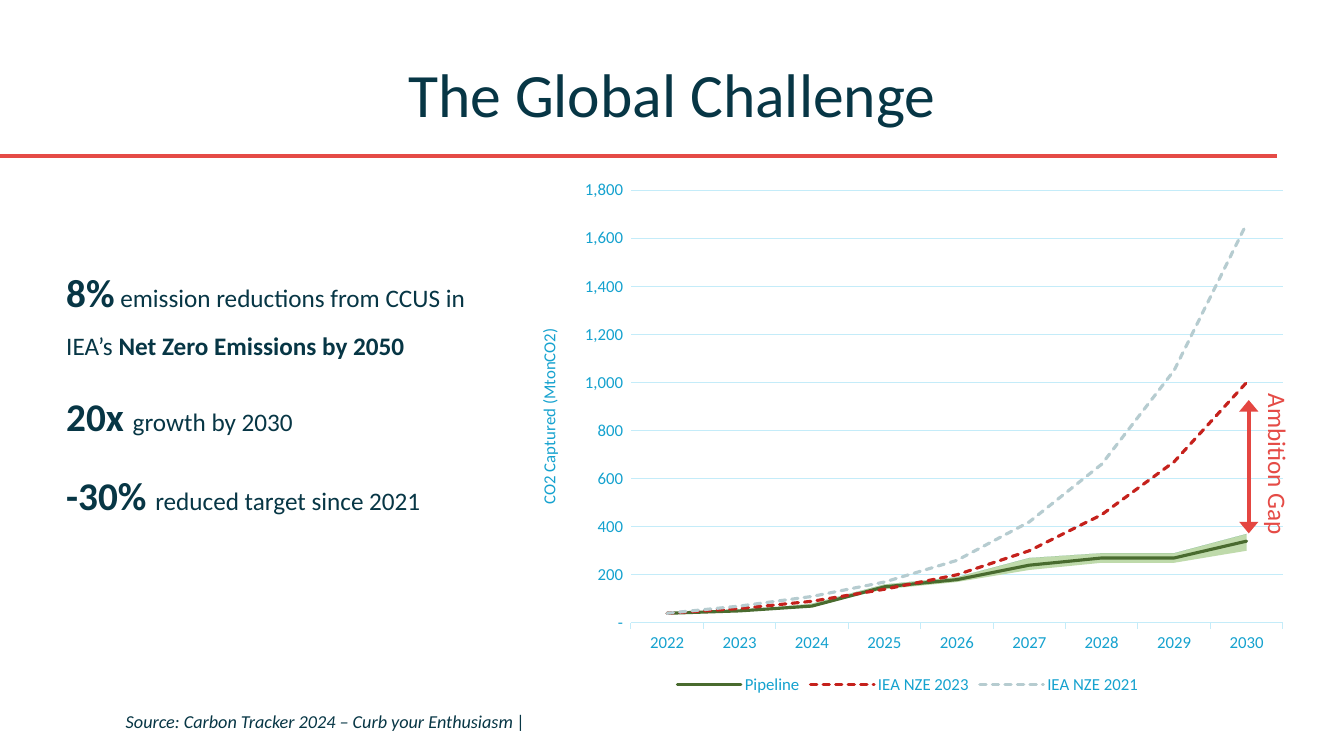
from lxml.etree import SubElement
from pptx import Presentation
from pptx.chart.data import CategoryChartData
from pptx.dml.color import RGBColor
from pptx.enum.chart import XL_CHART_TYPE, XL_LEGEND_POSITION, XL_MARKER_STYLE, XL_TICK_MARK
from pptx.enum.dml import MSO_LINE
from pptx.enum.shapes import MSO_CONNECTOR
from pptx.enum.text import MSO_ANCHOR, PP_ALIGN
from pptx.oxml import parse_xml
from pptx.oxml.ns import nsdecls, qn
from pptx.util import Cm, Pt

FONT = "Calibri"
INK, RED, ARROW_RED = "073645", "E54B46", "E44641"
AXIS_BLUE, GRID_BLUE = "15A2CF", "C4ECF9"
CHART_BOX = (13.03, 4.27, 19.69, 13.34)

YEARS = [str(year) for year in range(2022, 2031)]
# name, colour (None for the invisible base of the band), values
BAND = [
    ("Series 1", None, (40, 50, 70, 140, 170, 220, 250, 250, 300)),
    ("Series 2", "BFDAAB", (0, 0, 10, 20, 20, 50, 40, 40, 70)),
    ("Series 3", "419478", (None,) * len(YEARS)),
]
# name, colour, dash, values
LINES = [
    ("Pipeline", "496B2F", MSO_LINE.SOLID, (40, 50, 70, 150, 180, 240, 270, 270, 340)),
    ("IEA NZE 2023", "C5211C", MSO_LINE.SQUARE_DOT, (40, 60, 90, 140, 200, 300, 450, 670, 1000)),
    ("IEA NZE 2021", "B6CCD0", MSO_LINE.SQUARE_DOT, (40, 70, 110, 170, 260, 420, 660, 1050, 1660)),
]
# each paragraph is a list of (text, size, bold)
FACTS = [
    [("8%", 28, True), (" emission reductions from CCUS in IEA’s ", 18, False),
     ("Net Zero Emissions by 2050", 18, True)],
    [("20x ", 28, True), ("growth by 2030", 18, False)],
    [("-30% ", 28, True), ("reduced target since 2021", 18, False)],
]


def rgb(value):
    return RGBColor.from_string(value)


def set_font(font, size, color, bold=False, italic=False):
    font.name, font.size, font.bold, font.italic = FONT, Pt(size), bold, italic
    font.color.rgb = rgb(color)


def set_line(line, color, width):
    line.color.rgb = rgb(color)
    line.width = Pt(width)


def set_layout(holder, index, **lengths):
    """Place a chart part by lengths in cm; index is where c:layout belongs."""
    layout = holder.find(qn("c:layout"))
    if layout is None:
        layout = parse_xml(f"<c:layout {nsdecls('c')}/>")
        holder.insert(index, layout)
    manual = SubElement(layout, qn("c:manualLayout"))
    if "w" in lengths:
        SubElement(manual, qn("c:layoutTarget")).set("val", "inner")
    for side in "xy":
        SubElement(manual, qn(f"c:{side}Mode")).set("val", "edge")
    width, height = CHART_BOX[2:]
    for side, length in lengths.items():
        fraction = length / (width if side in "xw" else height)
        SubElement(manual, qn(f"c:{side}")).set("val", str(fraction))


def move_to_line_plot(chart, first):
    """Draw the series from index first onwards as lines on the same axes."""
    area = chart.element.find(".//" + qn("c:areaChart"))
    lines = parse_xml(f'<c:lineChart {nsdecls("c")}><c:grouping val="standard"/>'
                      '<c:varyColors val="0"/></c:lineChart>')
    for ser in area.findall(qn("c:ser"))[first:]:
        lines.append(ser)
    SubElement(lines, qn("c:marker")).set("val", "1")
    for axis in area.findall(qn("c:axId")):
        SubElement(lines, qn("c:axId")).set("val", axis.get("val"))
    area.addnext(lines)


class SlideBuilder:
    def __init__(self, slide):
        self.s = slide

    def text(self, box, paragraphs, color=INK, italic=False, align=PP_ALIGN.LEFT,
             anchor=MSO_ANCHOR.TOP, spacing=1.0, before=0, rotation=0):
        sp = self.s.shapes.add_textbox(*map(Cm, box))
        sp.rotation = rotation
        tf = sp.text_frame
        tf.word_wrap = True
        tf.vertical_anchor = anchor
        for i, runs in enumerate(paragraphs):
            p = tf.add_paragraph() if i else tf.paragraphs[0]
            p.alignment, p.line_spacing = align, spacing
            p.space_before = Pt(before if i else 0)
            for text, size, bold in runs:
                r = p.add_run()
                r.text = text
                set_font(r.font, size, color, bold, italic)

    def line(self, x1, y1, x2, y2, color, width, arrows=False):
        sp = self.s.shapes.add_connector(MSO_CONNECTOR.STRAIGHT, *map(Cm, (x1, y1, x2, y2)))
        set_line(sp.line, color, width)
        spPr = sp.element.spPr
        if arrows:
            for tag in ("a:headEnd", "a:tailEnd"):
                end = SubElement(spPr.find(qn("a:ln")), qn(tag))
                end.set("type", "triangle")
                end.set("w", "lg")
        SubElement(spPr, qn("a:effectLst"))

    def chart(self):
        data = CategoryChartData()
        data.categories = YEARS
        for name, *_, values in BAND + LINES:
            data.add_series(name, values)
        chart = self.s.shapes.add_chart(
            XL_CHART_TYPE.AREA_STACKED, *map(Cm, CHART_BOX), data).chart
        chart.has_title = False
        set_font(chart.font, 12, INK)
        move_to_line_plot(chart, len(BAND))
        band_plot, line_plot = chart.plots
        band_plot.vary_by_categories = False
        for series, (_, color, _) in zip(band_plot.series, BAND):
            if color:
                series.format.fill.solid()
                series.format.fill.fore_color.rgb = rgb(color)
            else:
                series.format.fill.background()
            series.format.line.fill.background()
        for series, (_, color, dash, _) in zip(line_plot.series, LINES):
            set_line(series.format.line, color, 2.25)
            series.format.line.dash_style = dash
            ln = series.format.line.fill and chart.element.findall(
                ".//" + qn("c:lineChart") + "/" + qn("c:ser") + "/" + qn("c:spPr") + "/" + qn("a:ln"))[-1]
            series.marker.style = XL_MARKER_STYLE.NONE
            series.smooth = False
            ln.set("cap", "rnd")
            SubElement(ln, qn("a:round"))
        self.axes(chart)
        self.legend(chart)
        set_layout(chart.element.find(".//" + qn("c:plotArea")), 0, x=2.87, y=0.52, w=16.43, h=10.91)

    def axes(self, chart):
        years, amounts = chart.category_axis, chart.value_axis
        for axis in (years, amounts):
            set_font(axis.tick_labels.font, 12, AXIS_BLUE)
            axis.minor_tick_mark = XL_TICK_MARK.NONE
        years.has_major_gridlines = False
        years.major_tick_mark = XL_TICK_MARK.OUTSIDE
        set_line(years.format.line, GRID_BLUE, 0.75)
        amounts.minimum_scale, amounts.maximum_scale, amounts.major_unit = 0, 1800, 200
        amounts.major_tick_mark = XL_TICK_MARK.NONE
        amounts.format.line.fill.background()
        amounts.has_major_gridlines = True
        set_line(amounts.major_gridlines.format.line, GRID_BLUE, 0.75)
        amounts.tick_labels.number_format = r'_(* #,##0_);_(* \(#,##0\);_(* "-"_);_(@_)'
        amounts.tick_labels.number_format_is_linked = False
        r = amounts.axis_title.text_frame.paragraphs[0].add_run()
        r.text = "CO2 Captured (MtonCO2)"
        set_font(r.font, 12, AXIS_BLUE)
        val_ax = chart.element.find(".//" + qn("c:valAx"))
        val_ax.find(qn("c:crossBetween")).set("val", "between")
        title = val_ax.find(qn("c:title"))
        body = title.find(".//" + qn("a:bodyPr"))
        body.set("rot", "-5400000")
        body.set("vert", "horz")
        set_layout(title, 1, x=0.44, y=3.93)

    def legend(self, chart):
        chart.has_legend = True
        chart.legend.position = XL_LEGEND_POSITION.BOTTOM
        chart.legend.include_in_layout = False
        set_font(chart.legend.font, 12, AXIS_BLUE)
        position = chart.element.find(".//" + qn("c:legendPos"))
        for i in reversed(range(len(BAND))):
            position.addnext(parse_xml(f'<c:legendEntry {nsdecls("c")}><c:idx val="{i}"/>'
                                       '<c:delete val="1"/></c:legendEntry>'))


def main():
    prs = Presentation()
    prs.slide_width, prs.slide_height = Cm(33.87), Cm(19.05)
    b = SlideBuilder(prs.slides.add_slide(prs.slide_layouts[6]))
    b.line(0, 3.94, 32.18, 3.94, RED, 3)
    b.text((1.7, 0.76, 30.48, 3.18), [[("The Global Challenge", 44, False)]],
           align=PP_ALIGN.CENTER, anchor=MSO_ANCHOR.MIDDLE)
    b.text((1.42, 6.05, 11.33, 8.46), FACTS, spacing=1.5, before=5.6)
    b.chart()
    b.text((2.92, 17.83, 26.67, 0.66),
           [[("Source: Carbon Tracker 2024 – Curb your Enthusiasm |", 13, False)]],
           italic=True, spacing=0.9)
    b.text((30.12, 11.25, 4.17, 1.02), [[("Ambition Gap", 18, False)]], color=RED, rotation=90)
    b.line(31.47, 10.08, 31.47, 13.44, ARROW_RED, 2.75, arrows=True)
    prs.save("out.pptx")


if __name__ == "__main__":
    main()
